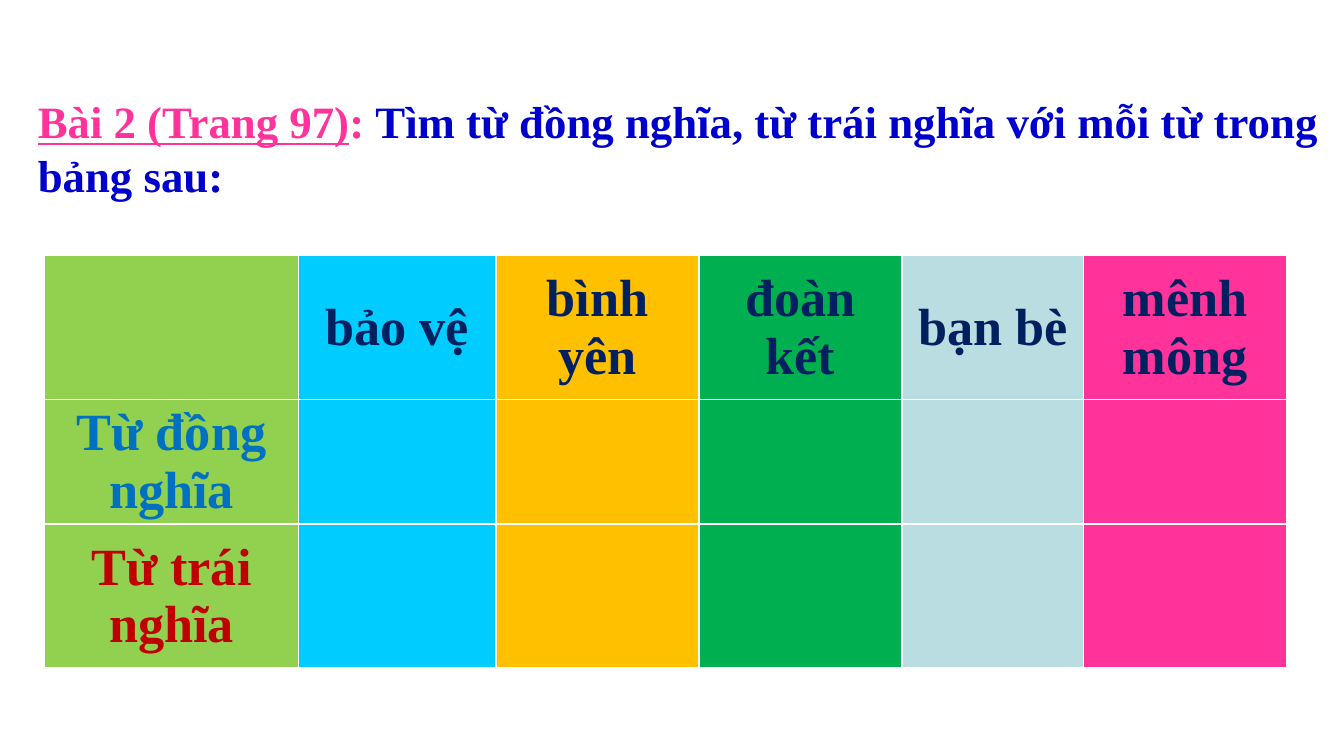
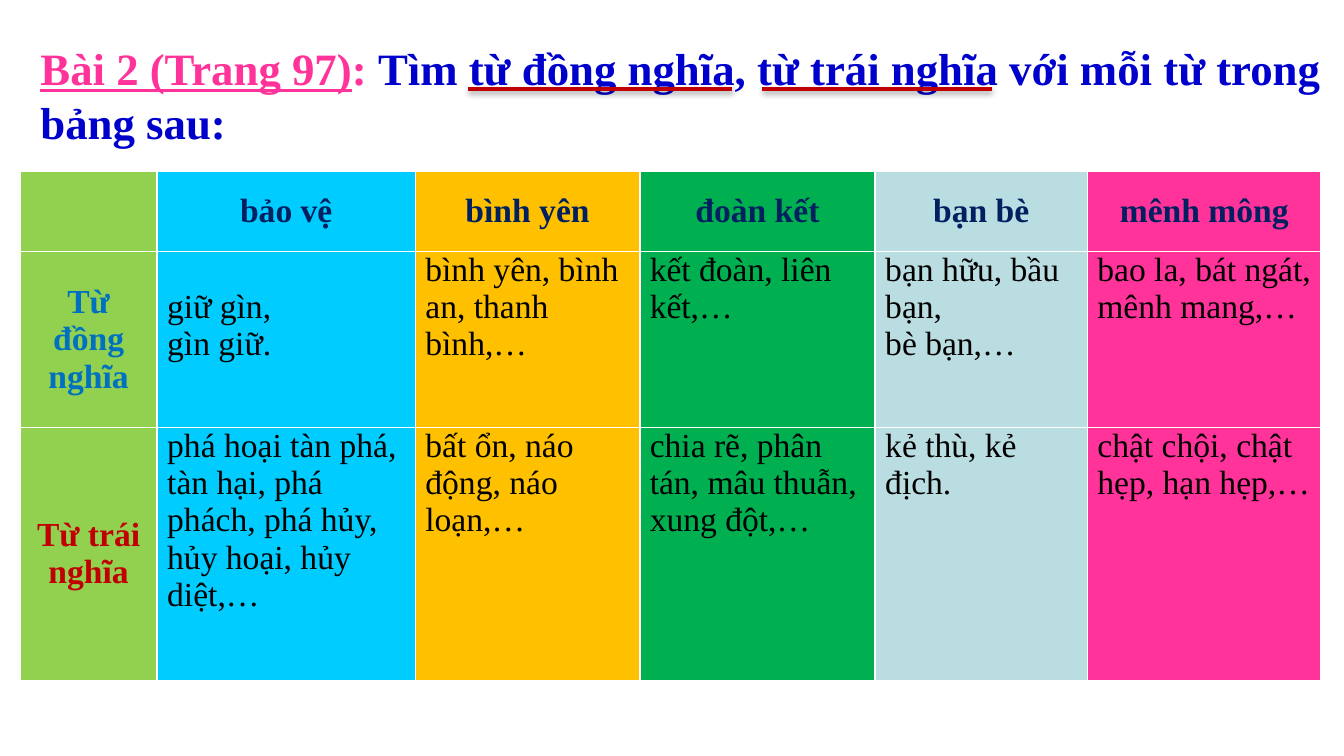
from lxml.etree import SubElement as Sub
from pptx import Presentation
from pptx.dml.color import RGBColor as Rgb
from pptx.enum.shapes import MSO_CONNECTOR as Link
from pptx.enum.text import MSO_ANCHOR as Anchor, MSO_AUTO_SIZE as Fit, PP_ALIGN as Align
from pptx.oxml import parse_xml
from pptx.oxml.ns import nsdecls, qn
from pptx.util import Cm, Pt

FONT = "Times New Roman"
HUES = {
    "pink": "FF3399", "blue": "0000CC", "navy": "002060", "sky": "0070C0",
    "red": "C00000", "black": "000000", "white": "FFFFFF", "lime": "92D050",
    "cyan": "00CCFF", "gold": "FFC000", "green": "00B050", "mist": "BADDE1",
}
COLS = ["lime", "cyan", "gold", "green", "mist", "pink"]
WORDS = ["", "bảo vệ", "bình yên", "đoàn kết", "bạn bè", "mênh mông"]
LABELS = [("Từ đồng nghĩa", "sky"), ("Từ trái nghĩa", "red")]
BLANK = [[""] * 5, [""] * 5]
ANSWERS = [
    ["giữ gìn,\ngìn giữ.", "bình yên, bình an, thanh bình,…",
     "kết đoàn, liên kết,…", "bạn hữu, bầu bạn,\nbè bạn,…",
     "bao la, bát ngát, mênh mang,…"],
    ["phá hoại tàn phá, tàn hại, phá phách, phá hủy, hủy hoại, hủy diệt,…",
     "bất ổn, náo động, náo loạn,…",
     "chia rẽ, phân tán, mâu thuẫn, xung đột,…",
     "kẻ thù, kẻ địch.", "chật chội, chật hẹp, hạn hẹp,…"],
]


def color(name):
    return Rgb.from_string(HUES[name])


def add_run(para, text, size, hue, bold=True, under=False):
    run = para.add_run()
    run.text = text
    font = run.font
    font.name, font.size, font.bold, font.underline = FONT, Pt(size), bold, under
    font.color.rgb = color(hue)


def add_title(slide, left, top):
    title = slide.shapes.title
    title.left, title.top = Cm(left), Cm(top)
    title.width, title.height = Cm(24.77), Cm(2.06)
    frame = title.text_frame
    frame.word_wrap, frame.auto_size = True, Fit.NONE
    frame.vertical_anchor = Anchor.TOP
    para = frame.paragraphs[0]
    para.alignment, para.space_before = Align.LEFT, Pt(4.8)
    add_run(para, "Bài 2 (Trang 97)", 24, "pink", under=True)
    add_run(para, ": ", 24, "pink")
    add_run(para, "Tìm từ đồng nghĩa, từ trái nghĩa với mỗi từ trong bảng sau:",
            24, "blue")


def add_mark(slide, left, top, width):
    """Draw a red rule with a soft shadow under a key phrase."""
    line = slide.shapes.add_connector(
        Link.STRAIGHT, Cm(left), Cm(top), Cm(left + width), Cm(top))
    line.line.color.rgb = color("red")
    line.line.width = Pt(2)
    props = line._element.spPr
    props.append(parse_xml(
        f'<a:effectLst {nsdecls("a")}><a:outerShdw blurRad="40000" dist="20000" '
        f'dir="5400000" rotWithShape="0"><a:srgbClr val="{HUES["black"]}">'
        '<a:alpha val="38000"/></a:srgbClr></a:outerShdw></a:effectLst>'))


def set_edges(cell):
    props = cell._tc.get_or_add_tcPr()
    for i, side in enumerate(["lnL", "lnR", "lnT", "lnB"]):
        edge = Sub(props, qn("a:" + side), w=str(Pt(1)))
        fill = Sub(edge, qn("a:solidFill"))
        Sub(fill, qn("a:srgbClr"), val=HUES["white"])
        props.insert(i, edge)


def fill_cell(cell, text, size, hue, head):
    """Write one cell; heads are bold and centred, answers start at the top."""
    cell.margin_left = cell.margin_right = Cm(0.19)
    cell.margin_top = cell.margin_bottom = 0
    cell.vertical_anchor = Anchor.MIDDLE if head else Anchor.TOP
    frame = cell.text_frame
    for i, part in enumerate(text.split("\n") if text else []):
        para = frame.add_paragraph() if i else frame.paragraphs[0]
        para.alignment = Align.CENTER if head else Align.LEFT
        add_run(para, part, size, hue, bold=head)


def add_grid(slide, left, top, widths, heights, size, answers):
    rows = [WORDS] + [[label] + row for (label, _), row in zip(LABELS, answers)]
    table = slide.shapes.add_table(
        len(rows), len(COLS), Cm(left), Cm(top),
        Cm(sum(widths)), Cm(sum(heights))).table
    table.first_row = table.horz_banding = False
    for col, width in zip(table.columns, widths):
        col.width = Cm(width)
    for r, row in enumerate(rows):
        table.rows[r].height = Cm(heights[r])
        for c, text in enumerate(row):
            cell = table.cell(r, c)
            cell.fill.solid()
            cell.fill.fore_color.rgb = color(COLS[c])
            set_edges(cell)
            hue = "navy" if r == 0 else LABELS[r - 1][1] if c == 0 else "black"
            fill_cell(cell, text, size, hue, head=r == 0 or c == 0)
    return table


def add_task(deck):
    slide = deck.slides.add_slide(deck.slide_layouts[5])
    add_title(slide, 0.46, 1.65)
    add_grid(slide, 0.84, 4.83, [4.8, 3.73, 3.84, 3.84, 3.43, 3.84],
             [2.72, 2.36, 2.72], 28, BLANK)


def add_key(deck):
    slide = deck.slides.add_slide(deck.slide_layouts[5])
    left, top = 0.51, 0.64
    add_title(slide, left, top)
    table = add_grid(slide, 0.38, 3.23, [2.59, 4.88, 4.24, 4.45, 4.01, 4.42],
                     [1.52, 3.33, 4.78], 18, ANSWERS)
    table.cell(1, 1).margin_top = Cm(0.7)
    for shift, width in [(8.33, 5), (13.89, 4.35)]:
        add_mark(slide, left + shift, top + 1.04, width)


def main():
    deck = Presentation()
    deck.slide_width, deck.slide_height = Cm(25.4), Cm(14.29)
    add_task(deck)
    add_key(deck)
    deck.save("out.pptx")


if __name__ == "__main__":
    main()
